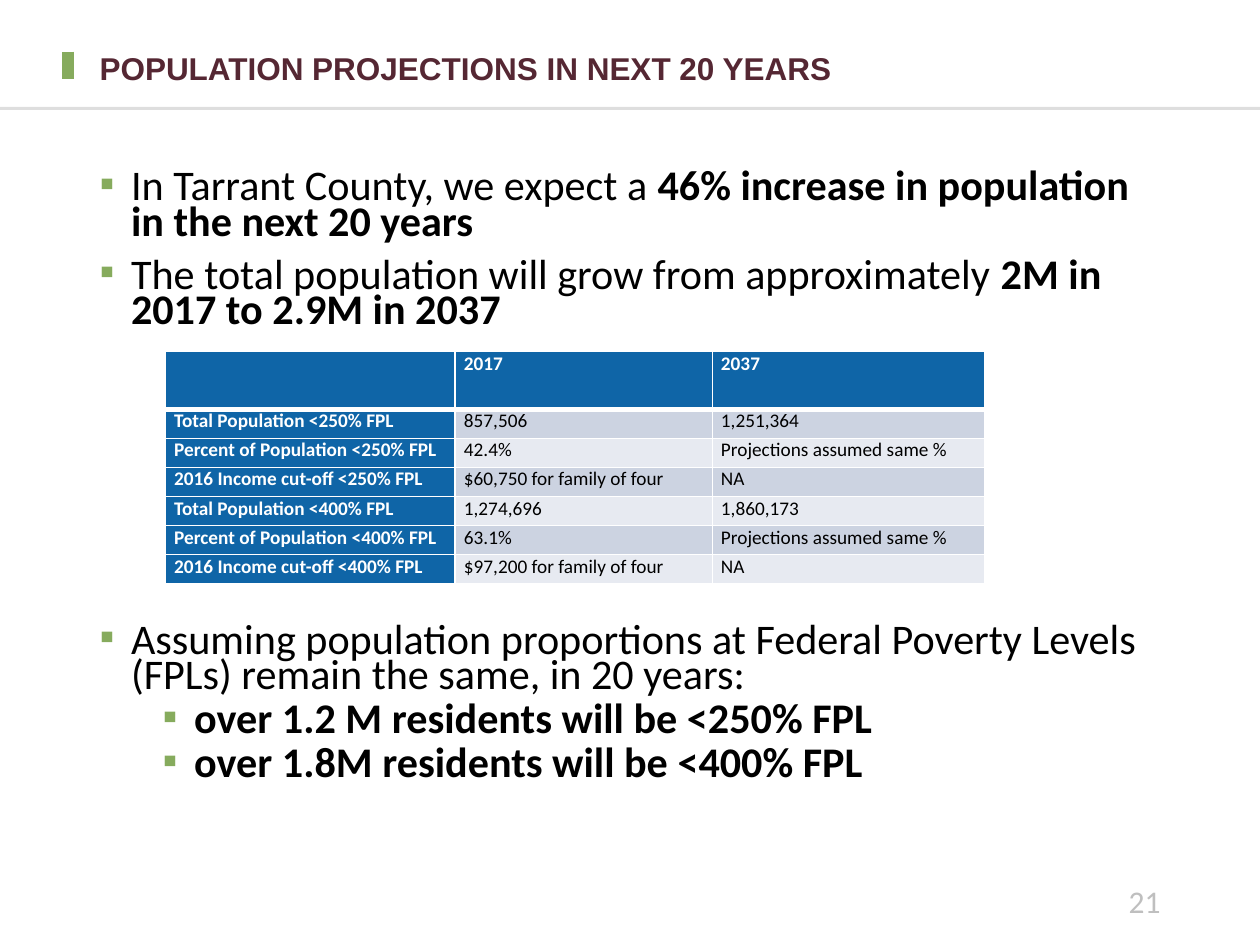
from lxml import etree
from pptx import Presentation
from pptx.dml.color import RGBColor
from pptx.enum.shapes import MSO_CONNECTOR
from pptx.enum.text import MSO_ANCHOR, MSO_AUTO_SIZE, PP_ALIGN
from pptx.oxml.ns import qn
from pptx.util import Pt

STRAIGHT = MSO_CONNECTOR.STRAIGHT
MIDDLE, TOP = MSO_ANCHOR.MIDDLE, MSO_ANCHOR.TOP
LEFT, RIGHT = PP_ALIGN.LEFT, PP_ALIGN.RIGHT
NO_AUTOFIT = MSO_AUTO_SIZE.NONE

GREEN = RGBColor(0x86, 0xAB, 0x5D)
MAROON = RGBColor(0x55, 0x27, 0x33)
BLUE = RGBColor(0x0F, 0x65, 0xA7)
BAND_DARK = RGBColor(0xCC, 0xD3, 0xE1)
BAND_LIGHT = RGBColor(0xE7, 0xEA, 0xF1)
GRAY = RGBColor(0xBF, 0xBF, 0xBF)
BLACK = RGBColor(0, 0, 0)
WHITE = RGBColor(255, 255, 255)

# Content
TITLE = "POPULATION PROJECTIONS IN NEXT 20 YEARS"
PAGE_NUMBER = "21"
TABLE_GAP = 168  # space before the bullet that follows the table
# Each bullet: level, space before, runs of (text, bold)
BULLETS = [
    (0, 0, [("In Tarrant County, we expect a ", False),
            ("46% increase in population in the next 20 years", True)]),
    (0, 10, [("The total population will grow from approximately ", False),
             ("2M in 2017 to 2.9M in 2037", True)]),
    (0, TABLE_GAP, [("Assuming population proportions at Federal Poverty Levels "
                     "(FPLs) remain the same, in 20 years:", False)]),
    (1, 5, [("over 1.2 M residents will be <250% FPL", True)]),
    (1, 5, [("over 1.8M residents will be <400% FPL", True)]),
]
TABLE_ROWS = [
    ("", "2017", "2037"),
    ("Total Population <250% FPL", "857,506", "1,251,364"),
    ("Percent of Population <250% FPL", "42.4%", "Projections assumed same %"),
    ("2016 Income cut-off <250% FPL", "$60,750 for family of four", "NA"),
    ("Total Population <400% FPL", "1,274,696", "1,860,173"),
    ("Percent of Population <400% FPL", "63.1%", "Projections assumed same %"),
    ("2016 Income cut-off <400% FPL", "$97,200 for family of four", "NA"),
]

# Layout in points
MARGIN, CONTENT_WIDTH = 49.7, 620.6
COLUMN_WIDTHS = [165.6, 146.9, 155.5]
HEADER_HEIGHT, ROW_HEIGHT = 33.1, 16.6
INDENTS = {0: 18, 1: 54}
HANGING = 18


def place(shape, left, top, width, height):
    shape.left, shape.top = Pt(left), Pt(top)
    shape.width, shape.height = Pt(width), Pt(height)


def style(font, name, size, color, bold=False):
    font.name, font.size, font.bold = name, Pt(size), bold
    font.color.rgb = color


def add_line(slide, start, end, color, width):
    line = slide.shapes.add_connector(STRAIGHT, *map(Pt, start + end))
    line.line.color.rgb = color
    line.line.width = Pt(width)
    etree.SubElement(line._element.spPr, qn("a:effectLst"))
    return line


def add_bullet(paragraph, level):
    properties = paragraph._p.get_or_add_pPr()
    properties.set("marL", str(Pt(INDENTS[level])))
    properties.set("indent", str(-Pt(HANGING)))
    color = etree.SubElement(properties, qn("a:buClr"))
    etree.SubElement(color, qn("a:srgbClr"), val=str(GREEN))
    etree.SubElement(properties, qn("a:buFont"), typeface="Arial")
    etree.SubElement(properties, qn("a:buChar"), char="▪")


def add_borders(cell, bottom_width):
    properties = cell._tc.get_or_add_tcPr()
    for side, width in (("L", 1), ("R", 1), ("T", 1), ("B", bottom_width)):
        border = etree.SubElement(properties, qn("a:ln" + side), w=str(Pt(width)))
        fill = etree.SubElement(border, qn("a:solidFill"))
        etree.SubElement(fill, qn("a:srgbClr"), val=str(WHITE))


presentation = Presentation()
presentation.slide_width, presentation.slide_height = Pt(720), Pt(540)
slide = presentation.slides.add_slide(presentation.slide_layouts[1])

# Accent bar and rule under the title
add_line(slide, (38.9, 29.5), (38.9, 45.4), GREEN, 7)
rule = add_line(slide, (0, 61.9), (720, 61.9), BLACK, 1.75)
rule_color = rule._element.spPr.find(".//" + qn("a:srgbClr"))
etree.SubElement(rule_color, qn("a:alpha"), val="12000")

# Title
title = slide.shapes.title
place(title, MARGIN, 19.4, CONTENT_WIDTH, 41)
frame = title.text_frame
frame.text = TITLE
frame.auto_size, frame.vertical_anchor = NO_AUTOFIT, MIDDLE
paragraph = frame.paragraphs[0]
paragraph.alignment, paragraph.line_spacing = LEFT, 0.9
style(paragraph.runs[0].font, "Arial", 18, MAROON, True)

# Bullets
body = slide.placeholders[1]
place(body, MARGIN, 95, CONTENT_WIDTH, 387.4)
body.fill.solid()
body.fill.fore_color.rgb = WHITE
frame = body.text_frame
frame.auto_size, frame.vertical_anchor = NO_AUTOFIT, TOP
for index, (level, space_before, runs) in enumerate(BULLETS):
    paragraph = frame.add_paragraph() if index else frame.paragraphs[0]
    paragraph.level = level
    paragraph.line_spacing, paragraph.space_before = 0.7, Pt(space_before)
    add_bullet(paragraph, level)
    for text, bold in runs:
        run = paragraph.add_run()
        run.text = text
        style(run.font, "Calibri", 24.1, BLACK, bold)

# Page number
number = slide.shapes.add_textbox(Pt(508.3), Pt(500.4), Pt(162), Pt(28.8))
frame = number.text_frame
frame.word_wrap, frame.vertical_anchor = True, MIDDLE
frame.text = PAGE_NUMBER
frame.paragraphs[0].alignment = RIGHT
style(frame.paragraphs[0].runs[0].font, "Calibri", 18, GRAY)

# Projection table
row_heights = [HEADER_HEIGHT] + [ROW_HEIGHT] * (len(TABLE_ROWS) - 1)
table = slide.shapes.add_table(
    len(TABLE_ROWS), len(COLUMN_WIDTHS), Pt(94.5), Pt(200.9),
    Pt(sum(COLUMN_WIDTHS)), Pt(sum(row_heights))).table
for column, width in zip(table.columns, COLUMN_WIDTHS):
    column.width = Pt(width)
for row_index, (row, height) in enumerate(zip(TABLE_ROWS, row_heights)):
    table.rows[row_index].height = Pt(height)
    band = BAND_DARK if row_index % 2 else BAND_LIGHT
    for column_index, text in enumerate(row):
        cell = table.cell(row_index, column_index)
        heading = row_index == 0 or column_index == 0
        cell.margin_left = cell.margin_right = Pt(5)
        cell.margin_top = cell.margin_bottom = Pt(0)
        add_borders(cell, 1 if row_index else 3)
        cell.fill.solid()
        cell.fill.fore_color.rgb = BLUE if heading else band
        paragraph = cell.text_frame.paragraphs[0]
        paragraph.text = text
        for run in paragraph.runs:
            style(run.font, "Calibri", 11, WHITE if heading else BLACK, heading)

presentation.save("out.pptx")
